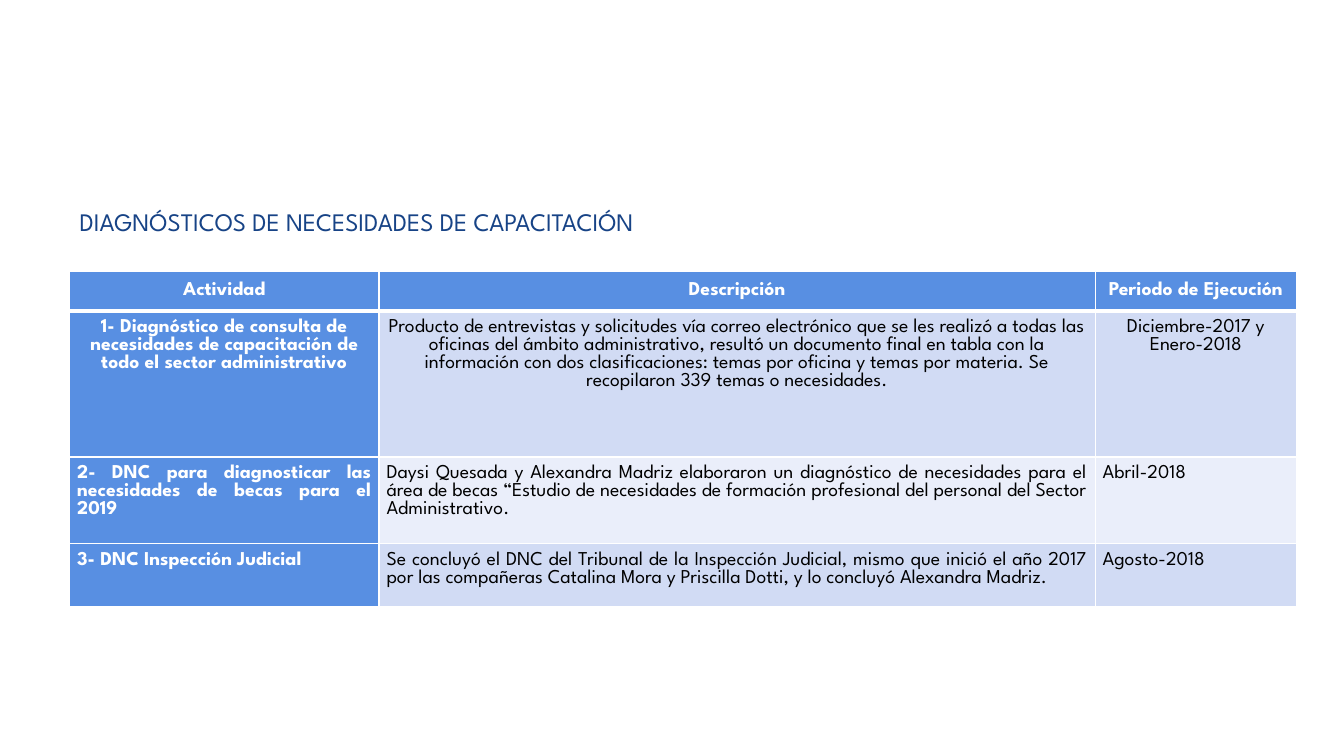
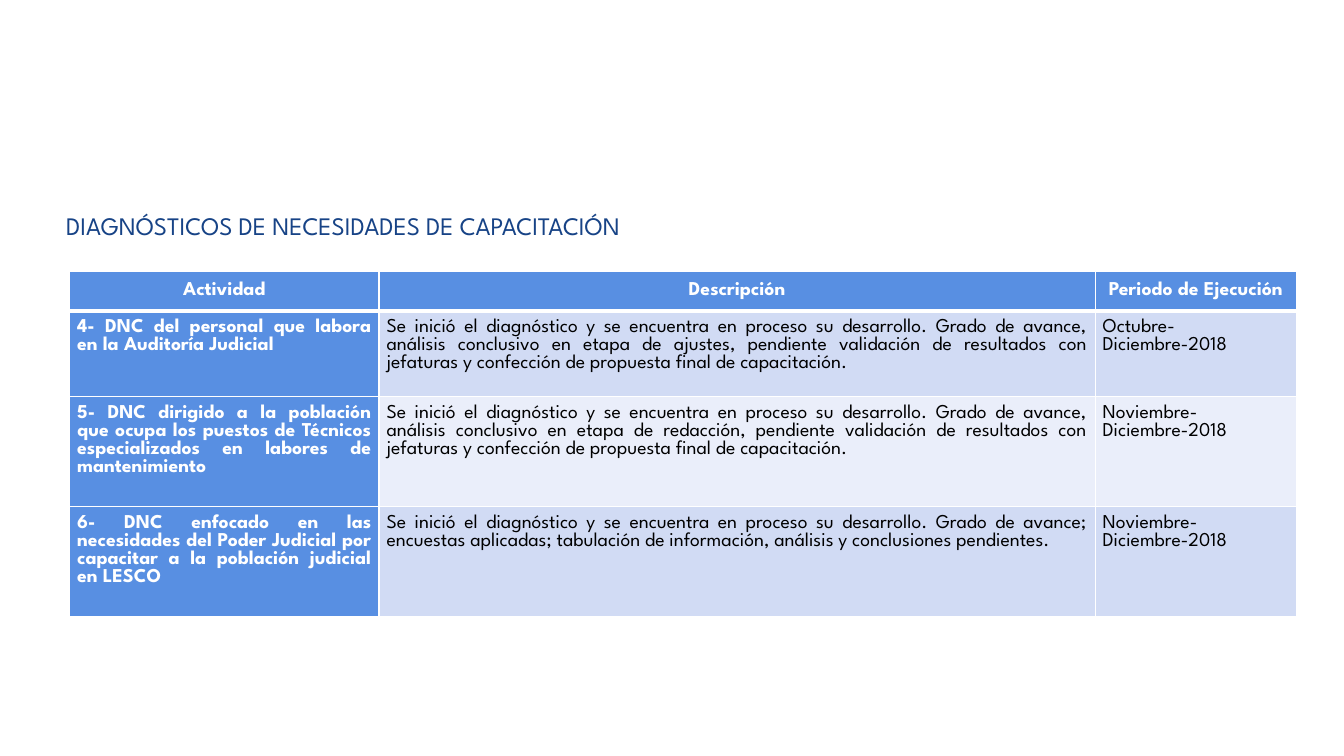
from lxml import etree
from pptx import Presentation
from pptx.dml.color import RGBColor
from pptx.enum import text
from pptx.oxml.ns import qn
from pptx.util import Pt

COLORS = {
    "title": "174386",
    "accent": "588FE2",
    "band_dark": "D1DBF4",
    "band_light": "EAEEFA",
    "white": "FFFFFF",
    "black": "000000",
}
FONT = "League Spartan"
TITLE = "DIAGNÓSTICOS DE NECESIDADES DE CAPACITACIÓN"
HEADERS = ("Actividad", "Descripción", "Periodo de Ejecución")
COL_WIDTHS = (221, 511.5, 144)
HEADER_HEIGHT = 28
TABLE_LEFT, TABLE_TOP = 49.75, 194
CELL_INSET = 5.4
CENTER, JUSTIFY = text.PP_ALIGN.CENTER, text.PP_ALIGN.JUSTIFY

# Each row: height, alignment, cell texts
SLIDES = (
    {
        "title_at": (49.75, 144),
        "rows": (
            (104.5, CENTER, (
                "1- Diagnóstico de consulta de necesidades de capacitación de "
                "todo el sector administrativo",
                "Producto de entrevistas y solicitudes vía correo electrónico que "
                "se les realizó a todas las oficinas del ámbito administrativo, "
                "resultó un documento final en tabla con la información con dos "
                "clasificaciones: temas por oficina y temas por materia. Se "
                "recopilaron 339 temas o necesidades.",
                "Diciembre-2017 y Enero-2018")),
            (62, JUSTIFY, (
                "2- DNC para diagnosticar las necesidades de becas para el 2019",
                "Daysi Quesada y Alexandra Madriz elaboraron un diagnóstico de "
                "necesidades para el área de becas “Estudio de necesidades de "
                "formación profesional del personal del Sector Administrativo.",
                "Abril-2018")),
            (45, JUSTIFY, (
                "3- DNC Inspección Judicial",
                "Se concluyó el DNC del Tribunal de la Inspección Judicial, mismo "
                "que inició el año 2017 por las compañeras Catalina Mora y "
                "Priscilla Dotti, y lo concluyó Alexandra Madriz.",
                "Agosto-2018")),
        ),
    },
    {
        "title_at": (40, 146.25),
        "rows": (
            (61.5, JUSTIFY, (
                "4- DNC del personal que labora en la Auditoría Judicial",
                "Se inició el diagnóstico y se encuentra en proceso su desarrollo. "
                "Grado de avance, análisis conclusivo en etapa de ajustes, "
                "pendiente validación de resultados con jefaturas y confección de "
                "propuesta final de capacitación.",
                "Octubre-Diciembre-2018")),
            (78.5, JUSTIFY, (
                "5- DNC dirigido a la población que ocupa los puestos de Técnicos "
                "especializados en labores de mantenimiento",
                "Se inició el diagnóstico y se encuentra en proceso su desarrollo. "
                "Grado de avance, análisis conclusivo en etapa de redacción, "
                "pendiente validación de resultados con jefaturas y confección de "
                "propuesta final de capacitación.",
                "Noviembre-Diciembre-2018")),
            (78.5, JUSTIFY, (
                "6- DNC enfocado en las necesidades del Poder Judicial por "
                "capacitar a la población judicial en LESCO",
                "Se inició el diagnóstico y se encuentra en proceso su desarrollo. "
                "Grado de avance; encuestas aplicadas; tabulación de información, "
                "análisis y conclusiones pendientes.",
                "Noviembre-Diciembre-2018")),
        ),
    },
)


def write(tf, content, size=14, color="black", bold=False, align=None,
          anchor=text.MSO_ANCHOR.TOP):
    p = tf.paragraphs[0]
    p.alignment = align
    r = p.add_run()
    r.text = content
    r.font.name = FONT
    r.font.size = Pt(size)
    r.font.bold = bold
    r.font.color.rgb = RGBColor.from_string(COLORS[color])
    tf.vertical_anchor = anchor


def add_title(s, left, top):
    sp = s.shapes.title
    sp.left, sp.top, sp.width, sp.height = Pt(left), Pt(top), Pt(503), Pt(29)
    tf = sp.text_frame
    tf.word_wrap = True
    tf.auto_size = text.MSO_AUTO_SIZE.NONE
    write(tf, TITLE, size=18, color="title", align=text.PP_ALIGN.LEFT,
          anchor=text.MSO_ANCHOR.MIDDLE)


def set_borders(cell, top=1, bottom=1):
    """Draw white cell borders; call before the fill, which must follow them."""
    tcPr = cell._tc.get_or_add_tcPr()
    for side, width in (("L", 1), ("R", 1), ("T", top), ("B", bottom)):
        ln = etree.SubElement(tcPr, qn(f"a:ln{side}"), w=str(Pt(width)))
        fill = etree.SubElement(ln, qn("a:solidFill"))
        etree.SubElement(fill, qn("a:srgbClr"), val=COLORS["white"])


def format_cell(cell, row, col, content, align):
    header = row == 0
    accent = header or col == 0
    cell.margin_left = cell.margin_right = Pt(CELL_INSET)
    cell.margin_top = cell.margin_bottom = Pt(CELL_INSET)
    set_borders(cell, top=3 if row == 1 else 1, bottom=3 if header else 1)
    band = "band_dark" if row % 2 else "band_light"
    cell.fill.solid()
    cell.fill.fore_color.rgb = RGBColor.from_string(
        COLORS["accent" if accent else band])
    write(cell.text_frame, content, color="white" if accent else "black",
          bold=accent, align=align)
    cell.vertical_anchor = (text.MSO_ANCHOR.MIDDLE if header
                            else text.MSO_ANCHOR.TOP)


def add_activity_table(s, body_rows):
    rows = ((HEADER_HEIGHT, CENTER, HEADERS), *body_rows)
    total_height = sum(height for height, _, _ in rows)
    table = s.shapes.add_table(
        len(rows), len(HEADERS), Pt(TABLE_LEFT), Pt(TABLE_TOP),
        Pt(sum(COL_WIDTHS)), Pt(total_height)).table
    for column, width in zip(table.columns, COL_WIDTHS):
        column.width = Pt(width)
    for i, (height, align, contents) in enumerate(rows):
        table.rows[i].height = Pt(height)
        for j, content in enumerate(contents):
            format_cell(table.cell(i, j), i, j, content, align)


def main():
    prs = Presentation()
    prs.slide_width, prs.slide_height = Pt(960), Pt(540)
    title_only = prs.slide_layouts[5]
    for content in SLIDES:
        s = prs.slides.add_slide(title_only)
        add_title(s, *content["title_at"])
        add_activity_table(s, content["rows"])
    prs.save("out.pptx")


if __name__ == "__main__":
    main()
